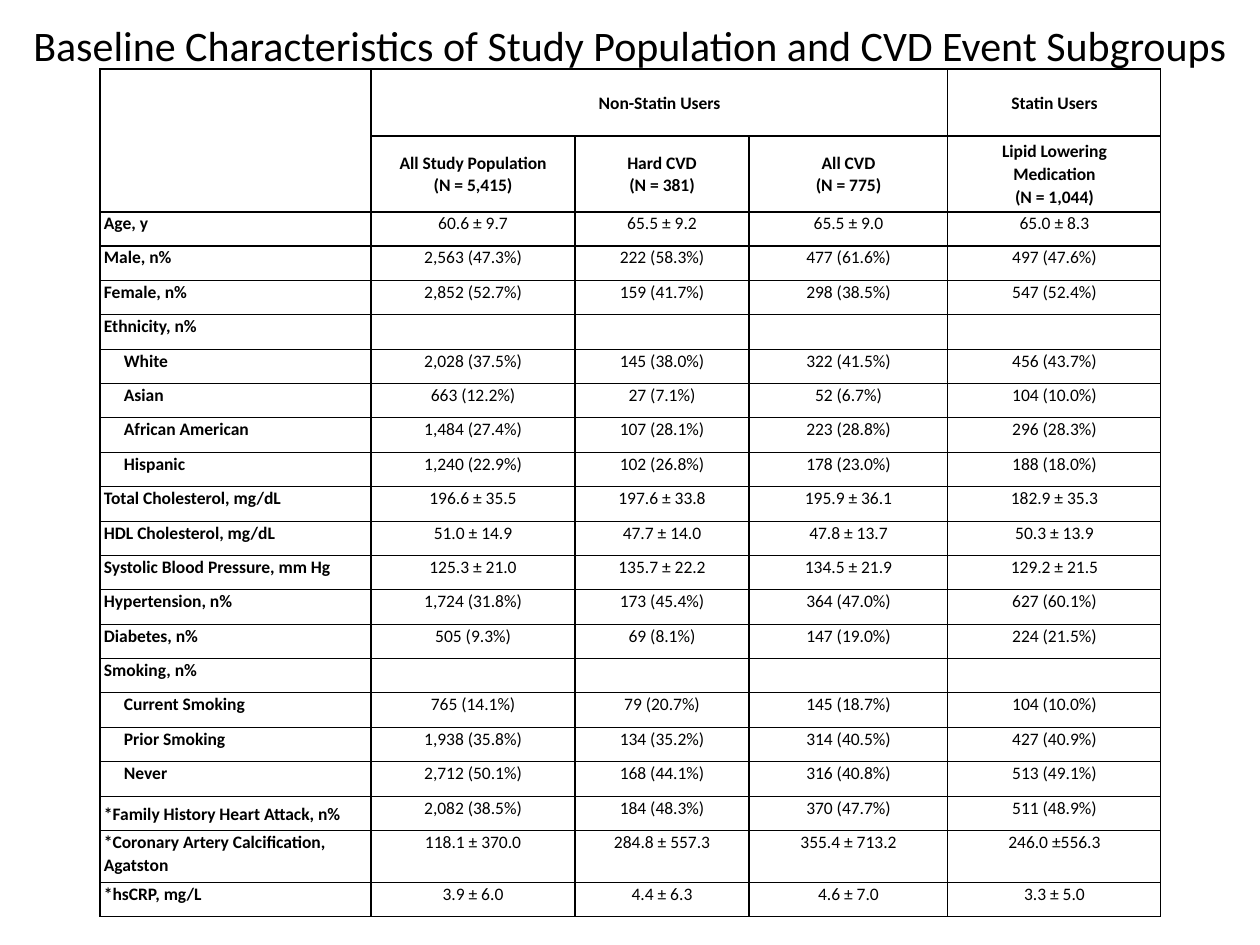
from lxml import etree
from pptx import Presentation
from pptx.dml.color import RGBColor
from pptx.enum.text import MSO_ANCHOR, MSO_AUTO_SIZE, PP_ALIGN
from pptx.oxml.ns import qn
from pptx.util import Emu, Pt

TOP, MIDDLE = MSO_ANCHOR.TOP, MSO_ANCHOR.MIDDLE
LEFT, CENTER = PP_ALIGN.LEFT, PP_ALIGN.CENTER
GROW = MSO_AUTO_SIZE.SHAPE_TO_FIT_TEXT

BLACK = RGBColor(0, 0, 0)
FONT = "Calibri"
EMU_PER_PX = 914400 / 126
TITLE_ONLY = 5

TITLE = "Baseline Characteristics of Study Population and CVD Event Subgroups"
COLUMN_WIDTHS = [271, 204, 174, 199, 213]
GROUP_HEIGHT, SUBGROUP_HEIGHT = 67, 76
REGULAR_ROWS, REGULAR_HEIGHT = 18, 619
CALCIFICATION_HEIGHT, CRP_HEIGHT = 52, 34
INSET, INDENT = 4, 20

GROUPS = {1: "Non-Statin Users", 4: "Statin Users"}
SUBGROUPS = [
    ["All Study Population", "(N = 5,415)"],
    ["Hard CVD", "(N = 381)"],
    ["All CVD", "(N = 775)"],
    ["Lipid Lowering", "Medication", "(N = 1,044)"],
]
INDENTED = {"White", "Asian", "African American", "Hispanic",
            "Current Smoking", "Prior Smoking", "Never"}
CENTERED_LABEL = "*Family History Heart Attack, n%"
MEASURES = [
    ["Age, y", "60.6 ± 9.7", "65.5 ± 9.2", "65.5 ± 9.0", "65.0 ± 8.3"],
    ["Male, n%", "2,563 (47.3%)", "222 (58.3%)", "477 (61.6%)", "497 (47.6%)"],
    ["Female, n%", "2,852 (52.7%)", "159 (41.7%)", "298 (38.5%)", "547 (52.4%)"],
    ["Ethnicity, n%", "", "", "", ""],
    ["White", "2,028 (37.5%)", "145 (38.0%)", "322 (41.5%)", "456 (43.7%)"],
    ["Asian", "663 (12.2%)", "27 (7.1%)", "52 (6.7%)", "104 (10.0%)"],
    ["African American", "1,484 (27.4%)", "107 (28.1%)", "223 (28.8%)", "296 (28.3%)"],
    ["Hispanic", "1,240 (22.9%)", "102 (26.8%)", "178 (23.0%)", "188 (18.0%)"],
    ["Total Cholesterol, mg/dL", "196.6 ± 35.5", "197.6 ± 33.8", "195.9 ± 36.1", "182.9 ± 35.3"],
    ["HDL Cholesterol, mg/dL", "51.0 ± 14.9", "47.7 ± 14.0", "47.8 ± 13.7", "50.3 ± 13.9"],
    ["Systolic Blood Pressure, mm Hg", "125.3 ± 21.0", "135.7 ± 22.2", "134.5 ± 21.9", "129.2 ± 21.5"],
    ["Hypertension, n%", "1,724 (31.8%)", "173 (45.4%)", "364 (47.0%)", "627 (60.1%)"],
    ["Diabetes, n%", "505 (9.3%)", "69 (8.1%)", "147 (19.0%)", "224 (21.5%)"],
    ["Smoking, n%", "", "", "", ""],
    ["Current Smoking", "765 (14.1%)", "79 (20.7%)", "145 (18.7%)", "104 (10.0%)"],
    ["Prior Smoking", "1,938 (35.8%)", "134 (35.2%)", "314 (40.5%)", "427 (40.9%)"],
    ["Never", "2,712 (50.1%)", "168 (44.1%)", "316 (40.8%)", "513 (49.1%)"],
    [CENTERED_LABEL, "2,082 (38.5%)", "184 (48.3%)", "370 (47.7%)", "511 (48.9%)"],
    ["*Coronary Artery Calcification, Agatston", "118.1 ± 370.0", "284.8 ± 557.3", "355.4 ± 713.2", "246.0 ±556.3"],
    ["*hsCRP, mg/L", "3.9 ± 6.0", "4.4 ± 6.3", "4.6 ± 7.0", "3.3 ± 5.0"],
]


def px(length):
    """Turn pixels into EMU."""
    return Emu(round(length * EMU_PER_PX))


def add_run(paragraph, text, size, bold=False):
    """Add one formatted run to a paragraph."""
    run = paragraph.add_run()
    run.text = text
    run.font.name, run.font.size, run.font.bold = FONT, Pt(size), bold
    run.font.color.rgb = BLACK


def place_title(slide, left, top, width, height):
    """Move the title placeholder into its box and fill it."""
    title = slide.shapes.title
    title.left, title.top, title.width, title.height = map(px, (left, top, width, height))
    frame = title.text_frame
    frame.word_wrap, frame.auto_size, frame.vertical_anchor = False, GROW, TOP
    heading = frame.paragraphs[0]
    heading.alignment = CENTER
    add_run(heading, TITLE, 24)


def style_cell(cell, inset):
    """Give a cell its margins, thin black borders and no fill."""
    cell.margin_left = cell.margin_right = px(inset)
    cell.margin_top = cell.margin_bottom = 0
    properties = cell._tc.get_or_add_tcPr()
    for side in ("a:lnL", "a:lnR", "a:lnT", "a:lnB"):
        border = etree.SubElement(properties, qn(side), w=str(Pt(0.75)))
        fill = etree.SubElement(border, qn("a:solidFill"))
        etree.SubElement(fill, qn("a:srgbClr"), val=str(BLACK))
    cell.fill.background()


def write_cell(cell, lines, bold, alignment=CENTER, anchor=TOP, indent=0):
    """Write one paragraph per line into a cell."""
    cell.vertical_anchor = anchor
    frame = cell.text_frame
    for index, line in enumerate(lines):
        paragraph = frame.add_paragraph() if index else frame.paragraphs[0]
        paragraph.alignment, paragraph.line_spacing = alignment, 1.07
        paragraph.space_after = Pt(8 if len(lines) == 1 else 0)
        if indent:
            paragraph._p.get_or_add_pPr().set("marL", str(px(indent)))
        if line:
            add_run(paragraph, line, 10, bold)
        else:
            etree.SubElement(paragraph._p, qn("a:endParaRPr"), sz="1000")


def row_heights():
    """Return all row heights, with the regular rows sharing one span."""
    edges = [round(i * REGULAR_HEIGHT / REGULAR_ROWS) for i in range(REGULAR_ROWS + 1)]
    regular = [low - high for high, low in zip(edges, edges[1:])]
    return [GROUP_HEIGHT, SUBGROUP_HEIGHT, *regular, CALCIFICATION_HEIGHT, CRP_HEIGHT]


def place_table(slide, left, top):
    """Build the characteristics table from its top left corner."""
    heights = row_heights()
    box = map(px, (left, top, sum(COLUMN_WIDTHS), sum(heights)))
    table = slide.shapes.add_table(len(heights), len(COLUMN_WIDTHS), *box).table
    table.first_row = table.horz_banding = False
    for column, width in zip(table.columns, COLUMN_WIDTHS):
        column.width = px(width)
    for row, height in zip(table.rows, heights):
        row.height = px(height)
        for index, cell in enumerate(row.cells):
            style_cell(cell, 0 if index == 1 else INSET)
    table.cell(0, 0).merge(table.cell(1, 0))
    table.cell(0, 1).merge(table.cell(0, 3))

    for column, group in GROUPS.items():
        write_cell(table.cell(0, column), [group], True, anchor=MIDDLE)
    for column, subgroup in enumerate(SUBGROUPS, 1):
        write_cell(table.cell(1, column), subgroup, True, anchor=MIDDLE)
    for row, (label, *values) in enumerate(MEASURES, 2):
        write_cell(table.cell(row, 0), [label], True, LEFT,
                   MIDDLE if label == CENTERED_LABEL else TOP,
                   INDENT if label in INDENTED else 0)
        for column, value in enumerate(values, 1):
            write_cell(table.cell(row, column), [value], False)


def main():
    """Build and save the slide."""
    presentation = Presentation()
    presentation.slide_width, presentation.slide_height = px(1260), px(945)
    slide = presentation.slides.add_slide(presentation.slide_layouts[TITLE_ONLY])
    place_title(slide, 15, 13, 1230, 63)
    place_table(slide, 100, 69)
    presentation.save("out.pptx")


if __name__ == "__main__":
    main()
